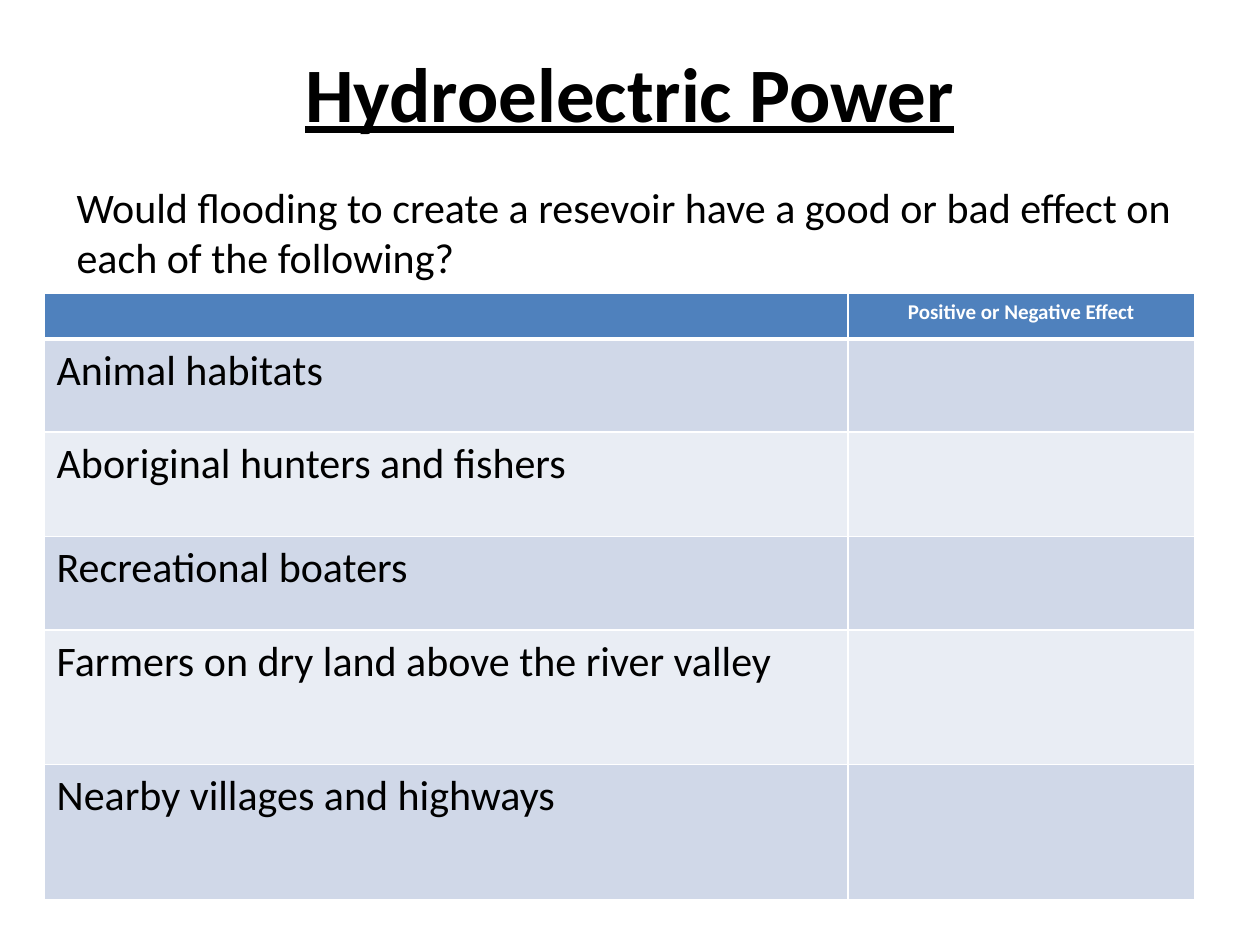
from pptx import Presentation
from pptx import util as u
from pptx.dml.color import RGBColor
from pptx.enum import text
from pptx.oxml import ns
from lxml import etree

HEADER_FILL, BAND_FILLS = "4F81BD", ("D0D8E8", "E9EDF4")
COLUMN_WIDTHS = (6.38, 2.75)
ROW_HEIGHTS = (0.36, 0.74, 0.83, 0.74, 1.07, 1.07)
ROWS = (
    ("", "Positive or Negative Effect"),
    ("Animal habitats", ""),
    ("Aboriginal hunters and fishers", ""),
    ("Recreational boaters", ""),
    ("Farmers on dry land above the river valley", ""),
    ("Nearby villages and highways", ""),
)


def rgb(value):
    return RGBColor.from_string(value)


def inches(box):
    return [u.Inches(length) for length in box]


def write(frame, words, size=24, color="000000", bold=False, underline=False,
          align=text.PP_ALIGN.LEFT, anchor=text.MSO_ANCHOR.TOP):
    frame.word_wrap = True
    frame.vertical_anchor = anchor
    paragraph = frame.paragraphs[0]
    paragraph.alignment = align
    if not words:
        paragraph._p.get_or_add_endParaRPr().set("sz", str(size * 100))
        return
    run = paragraph.add_run()
    run.text = words
    font = run.font
    font.name, font.size = "Calibri", u.Pt(size)
    font.bold, font.underline = bold, underline
    font.color.rgb = rgb(color)


def add_borders(cell, bottom=1, color="FFFFFF"):
    properties = cell._tc.get_or_add_tcPr()
    for side, width in (("L", 1), ("R", 1), ("T", 1), ("B", bottom)):
        line = etree.SubElement(properties, ns.qn(f"a:ln{side}"), w=str(u.Pt(width)))
        fill = etree.SubElement(line, ns.qn("a:solidFill"))
        etree.SubElement(fill, ns.qn("a:srgbClr"), val=color)


def place_title(slide, box):
    title = slide.shapes.title
    title.left, title.top, title.width, title.height = inches(box)
    write(title.text_frame, "Hydroelectric Power", size=44, bold=True, underline=True,
          align=text.PP_ALIGN.CENTER, anchor=text.MSO_ANCHOR.MIDDLE)


def place_question(slide, box):
    question = slide.shapes.add_textbox(*inches(box))
    write(question.text_frame, "Would flooding to create a resevoir have a good or bad "
          "effect on each of the following?")
    question.text_frame.auto_size = text.MSO_AUTO_SIZE.SHAPE_TO_FIT_TEXT


def place_effects(slide, box):
    effects = slide.shapes.add_table(len(ROWS), len(COLUMN_WIDTHS), *inches(box)).table
    for column, width in zip(effects.columns, COLUMN_WIDTHS):
        column.width = u.Inches(width)
    for index, (row, height, entries) in enumerate(zip(effects.rows, ROW_HEIGHTS, ROWS)):
        row.height = u.Inches(height)
        is_header = index == 0
        for cell, entry in zip(row.cells, entries):
            add_borders(cell, bottom=3 if is_header else 1)
            cell.fill.solid()
            if is_header:
                cell.fill.fore_color.rgb = rgb(HEADER_FILL)
                write(cell.text_frame, entry, size=12, color="FFFFFF", bold=True,
                      align=text.PP_ALIGN.CENTER)
            else:
                cell.fill.fore_color.rgb = rgb(BAND_FILLS[(index - 1) % 2])
                write(cell.text_frame, entry)


def main():
    deck = Presentation()
    deck.slide_width, deck.slide_height = inches((10, 7.5))
    slide = deck.slides.add_slide(deck.slide_layouts.get_by_name("Title Only"))
    place_title(slide, (0.5, 0.3, 9, 0.85))
    place_effects(slide, (0.35, 2.33, sum(COLUMN_WIDTHS), sum(ROW_HEIGHTS)))
    place_question(slide, (0.51, 1.39, 9.13, 0.91))
    deck.save("out.pptx")


if __name__ == "__main__":
    main()
